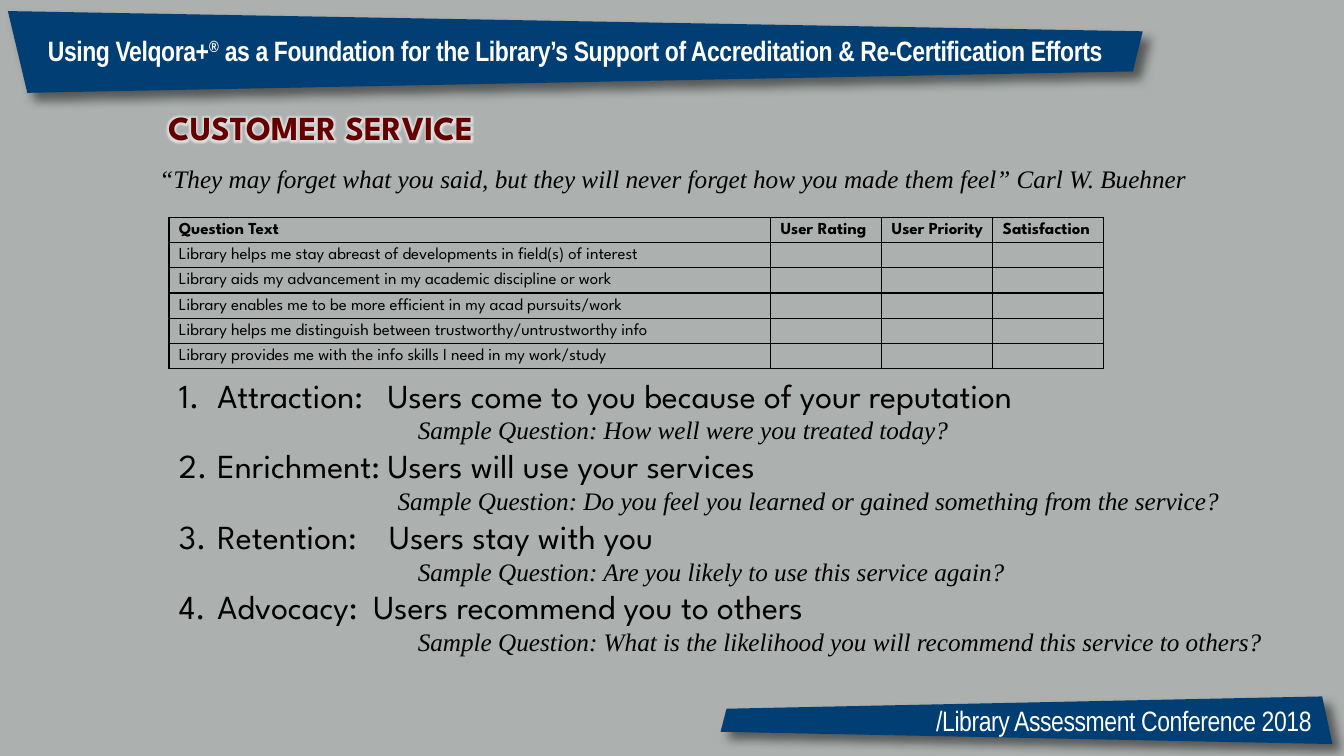
from lxml.etree import SubElement
from pptx import Presentation
from pptx.dml.color import RGBColor
from pptx.enum.text import MSO_ANCHOR, PP_ALIGN
from pptx.oxml import parse_xml
from pptx.oxml.ns import nsdecls, qn
from pptx.util import Cm, Pt

COLORS = {"gray": "ACB0AF", "navy": "013E73", "maroon": "640000",
          "white": "FFFFFF", "black": "000000"}
BANNER = {"name": "Arial Narrow", "size": Pt(20), "color": "white"}
HEADING = {"name": "League Spartan", "size": Pt(24), "bold": True, "color": "maroon"}
QUOTE = {"name": "Times New Roman", "size": Pt(18), "italic": True, "color": "black"}
STAGE = {"name": "League Spartan", "size": Pt(24), "color": "black"}
CELL = {"name": "League Spartan", "size": Pt(12), "color": "black"}

HEADERS = ["Question Text", "User Rating", "User Priority", "Satisfaction"]
QUESTIONS = [
    "Library helps me stay abreast of developments in field(s) of interest",
    "Library aids my advancement in my academic discipline or work",
    "Library enables me to be more efficient in my acad pursuits/work",
    "Library helps me distinguish between trustworthy/untrustworthy info",
    "Library provides me with the info skills I need in my work/study",
]
# stage, its meaning and tab stop in cm, sample question and its indent in cm
STAGES = [
    ("Attraction:", "Users come to you because of your reputation", 5.26,
     "How well were you treated today?", 6.02),
    ("Enrichment:", "Users will use your services", 5.26,
     "Do you feel you learned or gained something from the service?", 5.51),
    ("Retention:", "Users stay with you", 5.3,
     "Are you likely to use this service again?", 6.02),
    ("Advocacy:", "Users recommend you to others", 4.9,
     "What is the likelihood you will recommend this service to others?", 6.02),
]


def add_run(paragraph, text, style):
    run = paragraph.add_run()
    run.text = text
    for key, value in style.items():
        if key == "color":
            run.font.color.rgb = RGBColor.from_string(COLORS[value])
        else:
            setattr(run.font, key, value)
    return run


def add_text_box(slide, box, align=PP_ALIGN.LEFT):
    """Add a wrapping text box, box in cm, and return its text frame."""
    frame = slide.shapes.add_textbox(*map(Cm, box)).text_frame
    frame.word_wrap = True
    frame.paragraphs[0].alignment = align
    return frame


def add_ribbon(slide, corners):
    """Draw a navy four-cornered ribbon with a soft shadow, corners in cm."""
    start, *others = [(Cm(x), Cm(y)) for x, y in corners]
    builder = slide.shapes.build_freeform(*start)
    builder.add_line_segments(others, close=True)
    ribbon = builder.convert_to_shape()
    ribbon.fill.solid()
    ribbon.fill.fore_color.rgb = RGBColor.from_string(COLORS["navy"])
    ribbon.line.fill.background()
    ribbon.shadow.inherit = False
    effects = ribbon._element.spPr.find(qn("a:effectLst"))
    effects.append(parse_xml(
        f'<a:outerShdw {nsdecls("a")} blurRad="{Pt(7)}" dist="{Pt(7)}" dir="2700000">'
        f'<a:srgbClr val="{COLORS["black"]}"><a:alpha val="50000"/></a:srgbClr>'
        '</a:outerShdw>'))


def add_banner_text(slide, box, align, parts, bold=False):
    """Write (text, baseline) parts in tight white type."""
    paragraph = add_text_box(slide, box, align).paragraphs[0]
    for text, baseline in parts:
        properties = add_run(paragraph, text, {**BANNER, "bold": bold})._r.get_or_add_rPr()
        properties.set("spc", "-30")
        if baseline:
            properties.set("baseline", str(baseline))


def add_heading(slide):
    frame = add_text_box(slide, (3.99, 2.58, 21.95, 1.27))
    run = add_run(frame.paragraphs[0], "CUSTOMER SERVICE", HEADING)
    glow = parse_xml(
        f'<a:effectLst {nsdecls("a")}><a:glow rad="{Pt(8)}">'
        f'<a:srgbClr val="{COLORS["white"]}"><a:alpha val="60000"/></a:srgbClr>'
        '</a:glow></a:effectLst>')
    run._r.get_or_add_rPr().find(qn("a:solidFill")).addnext(glow)


def format_cell(cell, text, bold):
    for key, value in {"margin_left": Cm(0.25), "margin_right": Cm(0.02),
                       "margin_top": Cm(0.02), "margin_bottom": Cm(0),
                       "vertical_anchor": MSO_ANCHOR.MIDDLE}.items():
        setattr(cell, key, value)
    paragraph = cell.text_frame.paragraphs[0]
    if text:
        add_run(paragraph, text, {**CELL, "bold": bold})
    else:
        SubElement(paragraph._p, qn("a:endParaRPr"), sz="1200")
    properties = cell._tc.get_or_add_tcPr()
    for side in ("lnL", "lnR", "lnT", "lnB"):
        properties.append(parse_xml(
            f'<a:{side} {nsdecls("a")} w="{Pt(1)}"><a:solidFill>'
            f'<a:srgbClr val="{COLORS["black"]}"/></a:solidFill></a:{side}>'))
    cell.fill.background()


def add_question_table(slide):
    rows = [HEADERS] + [[question, "", "", ""] for question in QUESTIONS]
    table = slide.shapes.add_table(len(rows), len(HEADERS), Cm(4.26), Cm(5.48),
                                   Cm(23.56), Cm(3.81)).table
    table.first_row = table.horz_banding = False
    for column, width in zip(table.columns, (15.16, 2.8, 2.8, 2.8)):
        column.width = Cm(width)
    for row_index, row in enumerate(rows):
        for column_index, text in enumerate(row):
            format_cell(table.cell(row_index, column_index), text, row_index == 0)


def add_stages(slide):
    frame = add_text_box(slide, (4.26, 9.31, 29.6, 7.44))
    for number, (stage, meaning, stop, question, indent) in enumerate(STAGES, 1):
        paragraph = frame.paragraphs[0] if number == 1 else frame.add_paragraph()
        properties = paragraph._p.get_or_add_pPr()
        properties.set("marL", str(Cm(0.97)))
        properties.set("indent", str(-Cm(0.97)))
        SubElement(properties, qn("a:buFont"), typeface=STAGE["name"])
        SubElement(properties, qn("a:buAutoNum"), type="arabicPeriod", startAt=str(number))
        tabs = SubElement(properties, qn("a:tabLst"))
        SubElement(tabs, qn("a:tab"), pos=str(Cm(stop)), algn="l")
        add_run(paragraph, f"{stage}\t{meaning}", STAGE)

        sample = frame.add_paragraph()
        sample._p.get_or_add_pPr().set("marL", str(Cm(indent)))
        add_run(sample, f"Sample Question: {question}", QUOTE)


def main():
    presentation = Presentation()
    presentation.slide_width, presentation.slide_height = Cm(33.87), Cm(19.05)
    slide = presentation.slides.add_slide(presentation.slide_layouts[6])
    slide.background.fill.solid()
    slide.background.fill.fore_color.rgb = RGBColor.from_string(COLORS["gray"])

    add_ribbon(slide, [(0.2, 0.28), (28.8, 0.79), (28.55, 1.8), (0.69, 2.34)])
    add_banner_text(slide, (0.64, 0.71, 27.69, 1.12), PP_ALIGN.CENTER, [
        ("Using Velqora+", 0), ("®", 30000),
        (" as a Foundation for the Library’s Support of Accreditation"
         " & Re-Certification Efforts", 0)], bold=True)
    add_ribbon(slide, [(33.58, 18.75), (18.16, 18.44), (18.31, 17.86), (33.32, 17.55)])
    add_banner_text(slide, (22.07, 17.6, 11.23, 1.12), PP_ALIGN.RIGHT,
                    [("/Library Assessment Conference 2018", 0)])

    add_heading(slide)
    quote = add_text_box(slide, (3.63, 4, 26.67, 1.02), PP_ALIGN.CENTER)
    add_run(quote.paragraphs[0], "“They may forget what you said, but they will never "
            "forget how you made them feel” Carl W. Buehner", QUOTE)
    add_question_table(slide)
    add_stages(slide)
    presentation.save("out.pptx")


if __name__ == "__main__":
    main()
